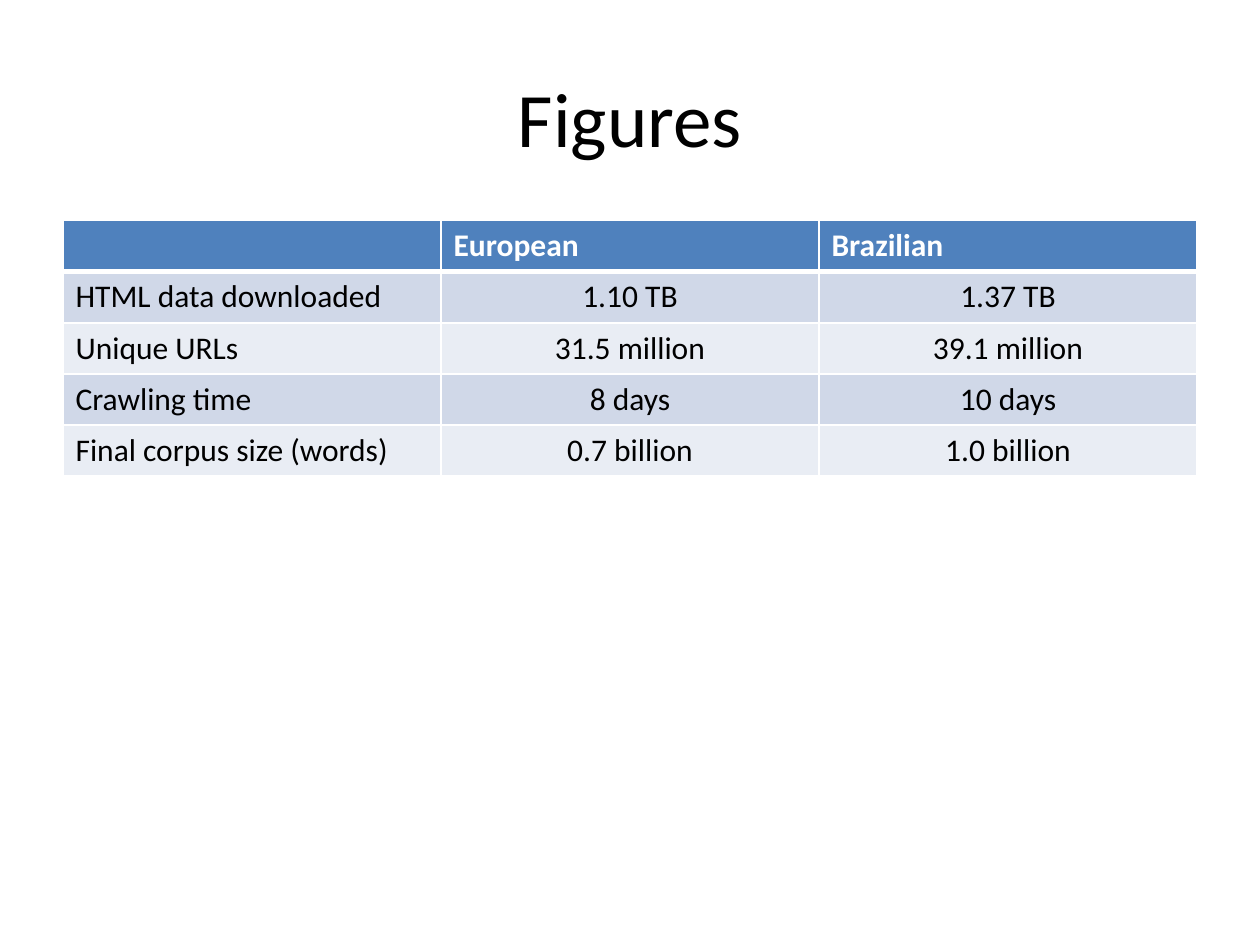
from dataclasses import dataclass

from lxml.etree import SubElement
from pptx import Presentation
from pptx.dml.color import RGBColor
from pptx.enum.text import MSO_ANCHOR, PP_ALIGN
from pptx.oxml.ns import qn
from pptx.util import Pt

PX = 9144
LEFT, CENTER = PP_ALIGN.LEFT, PP_ALIGN.CENTER
MIDDLE = MSO_ANCHOR.MIDDLE
TITLE_ONLY = 5


@dataclass(frozen=True)
class Theme:
    font: str = "Calibri"
    title: int = 44
    body: int = 18
    black: str = "000000"
    white: str = "FFFFFF"
    head: str = "4F81BD"
    bands: tuple = ("D0D8E8", "E9EDF4")
    thin: int = 1
    thick: int = 3


THEME = Theme()

ROWS = [
    ("", "European", "Brazilian"),
    ("HTML data downloaded", "1.10 TB", "1.37 TB"),
    ("Unique URLs", "31.5 million", "39.1 million"),
    ("Crawling time", "8 days", "10 days"),
    ("Final corpus size (words)", "0.7 billion", "1.0 billion"),
]


def scale(box):
    return [length * PX for length in box]


def style(para, size, color, align, bold=False):
    para.alignment = align
    font = para.font
    font.name = THEME.font
    font.size = Pt(size)
    font.bold = bold
    font.color.rgb = RGBColor.from_string(color)


def add_title(slide, box, text):
    title = slide.shapes.title
    title.left, title.top, title.width, title.height = scale(box)
    frame = title.text_frame
    frame.text = text
    frame.vertical_anchor = MIDDLE
    style(frame.paragraphs[0], THEME.title, THEME.black, CENTER)


def add_edges(cell, row):
    widths = {
        "L": THEME.thin,
        "R": THEME.thin,
        "T": THEME.thick if row == 1 else THEME.thin,
        "B": THEME.thick if row == 0 else THEME.thin,
    }
    props = cell._tc.get_or_add_tcPr()
    for side, width in widths.items():
        line = SubElement(props, qn(f"a:ln{side}"), w=str(Pt(width)))
        fill = SubElement(line, qn("a:solidFill"))
        SubElement(fill, qn("a:srgbClr"), val=THEME.white)


def add_figures(slide, box, rows):
    left, top, width, height = scale(box)
    count, span = len(rows), len(rows[0])
    table = slide.shapes.add_table(count, span, left, top, width, height).table
    for column in table.columns:
        column.width = width // span
    for r, row in enumerate(rows):
        table.rows[r].height = height // count
        head = r == 0
        for c, text in enumerate(row):
            cell = table.cell(r, c)
            cell.text = text
            add_edges(cell, r)
            cell.fill.solid()
            shade = THEME.head if head else THEME.bands[(r - 1) % 2]
            cell.fill.fore_color.rgb = RGBColor.from_string(shade)
            color = THEME.white if head else THEME.black
            align = LEFT if head or c == 0 else CENTER
            style(cell.text_frame.paragraphs[0], THEME.body, color, align, head)


def main():
    deck = Presentation()
    deck.slide_width, deck.slide_height = scale((1000, 750))
    slide = deck.slides.add_slide(deck.slide_layouts[TITLE_ONLY])
    add_title(slide, (50, 30, 900, 125), "Figures")
    add_figures(slide, (50, 175, 900, 203), ROWS)
    deck.save("out.pptx")


if __name__ == "__main__":
    main()
